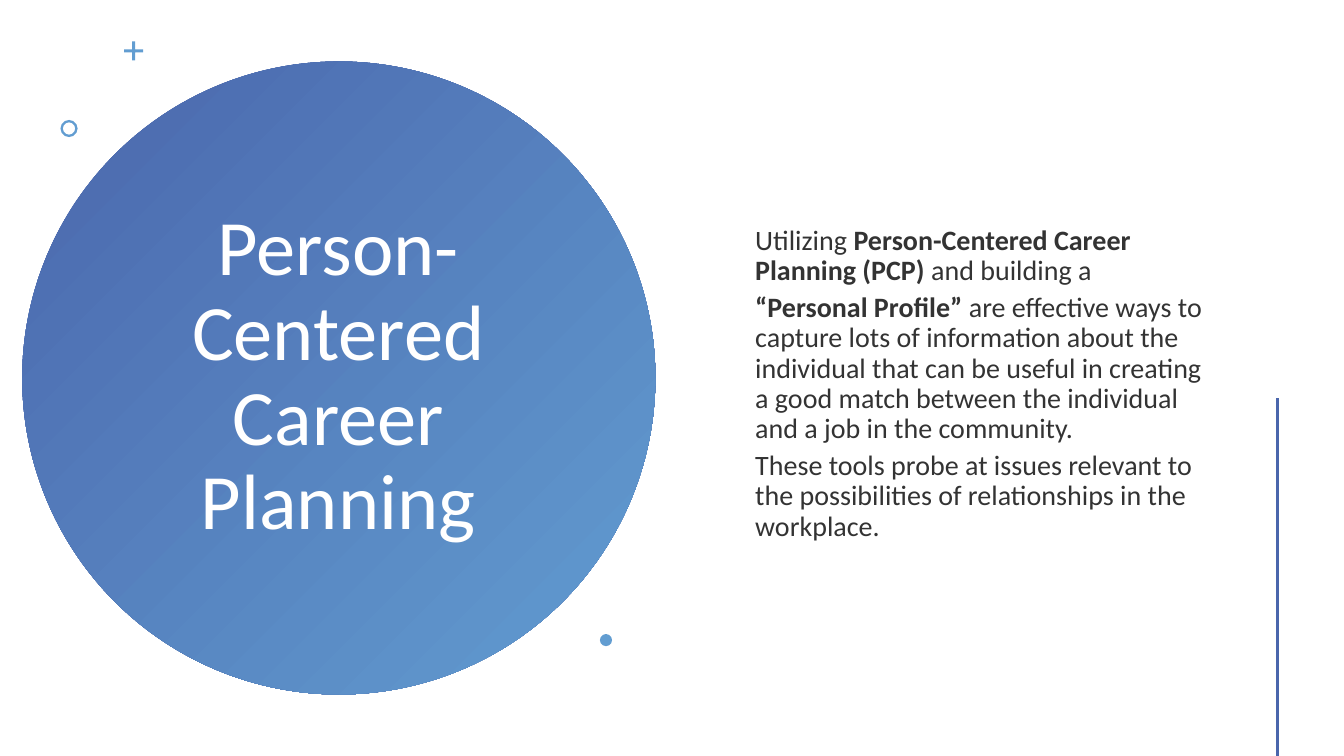
"""Build the Person-Centered Career Planning slide."""
from dataclasses import dataclass, field
from typing import Any

from lxml import etree
from pptx import Presentation
from pptx.dml.color import RGBColor
from pptx.enum.shapes import MSO_CONNECTOR, MSO_SHAPE
from pptx.enum.text import MSO_ANCHOR, MSO_AUTO_SIZE, PP_ALIGN
from pptx.oxml.ns import qn
from pptx.util import Pt

PX = 9144
SLIDE_W, SLIDE_H = 1333, 750
TITLE_ONLY = 5
OVAL, CROSS, DONUT = MSO_SHAPE.OVAL, MSO_SHAPE.CROSS, MSO_SHAPE.DONUT
STRAIGHT = MSO_CONNECTOR.STRAIGHT
MIDDLE, CENTER, LEFT = MSO_ANCHOR.MIDDLE, PP_ALIGN.CENTER, PP_ALIGN.LEFT
NO_AUTOFIT = MSO_AUTO_SIZE.NONE
COLORS = {"deep": "4A66AC", "sky": "629DD1", "white": "FFFFFF", "ink": "333333"}
FRAME_FORMAT = {"word_wrap": True, "auto_size": NO_AUTOFIT, "vertical_anchor": MIDDLE}


@dataclass(frozen=True)
class Ornament:
    """A preset shape in px with its fill colours and adjustments."""

    kind: Any
    left: int
    top: int
    size: int
    colors: tuple[str, ...] = ("sky",)
    adjustments: tuple[float, ...] = ()


@dataclass(frozen=True)
class Passage:
    """A paragraph as pairs of wording and boldness."""

    runs: tuple[tuple[str, bool], ...]


@dataclass(frozen=True)
class TextStyle:
    """Formats shared by all paragraphs and runs of a text frame."""

    size: int
    color: str
    paragraph: dict[str, Any] = field(default_factory=dict)


DISC = Ornament(OVAL, 22, 61, 628, ("deep", "sky"))
ACCENTS = [
    Ornament(CROSS, 123, 41, 19, adjustments=(0.42,)),
    Ornament(DONUT, 60, 119, 17, adjustments=(0.14,)),
    Ornament(OVAL, 595, 629, 12),
]
HEADING = [Passage((("Person-Centered Career Planning", False),))]
BODY = [
    Passage((
        ("Utilizing ", False),
        ("Person-Centered Career Planning (PCP)", True),
        (" and building a", False),
    )),
    Passage((
        ("“Personal Profile”", True),
        (" are effective ways to capture lots of information about the individual "
         "that can be useful in creating a good match between the individual "
         "and a job in the community.", False),
    )),
    Passage((
        ("These tools probe at issues relevant to the possibilities of "
         "relationships in the workplace.", False),
    )),
]
HEADING_STYLE = TextStyle(56, "white", {"alignment": CENTER, "line_spacing": 0.9})
BODY_STYLE = TextStyle(
    20, "ink", {"alignment": LEFT, "line_spacing": 0.9, "space_before": Pt(5)}
)


def px(length: int) -> int:
    """Turn px into EMU."""
    return length * PX


def rgb(name: str) -> RGBColor:
    """Look up a named colour."""
    return RGBColor.from_string(COLORS[name])


def apply(target: Any, formats: dict[str, Any]) -> None:
    """Set each format value on the target."""
    for attribute, value in formats.items():
        setattr(target, attribute, value)


def draw_ornament(slide: Any, ornament: Ornament) -> None:
    """Draw a borderless shape with a solid or diagonal gradient fill."""
    shape = slide.shapes.add_shape(
        ornament.kind, px(ornament.left), px(ornament.top),
        px(ornament.size), px(ornament.size),
    )
    shape.shadow.inherit = False
    shape.line.fill.background()
    for index, value in enumerate(ornament.adjustments):
        shape.adjustments[index] = value
    if len(ornament.colors) == 1:
        shape.fill.solid()
        shape.fill.fore_color.rgb = rgb(ornament.colors[0])
        return
    shape.fill.gradient()
    shape.fill.gradient_angle = 315
    for position, (stop, color) in enumerate(
        zip(shape.fill.gradient_stops, ornament.colors)
    ):
        stop.position = position
        stop.color.rgb = rgb(color)


def write_passages(frame: Any, passages: list[Passage], style: TextStyle) -> None:
    """Fill a text frame with styled paragraphs."""
    apply(frame, FRAME_FORMAT)
    for index, passage in enumerate(passages):
        paragraph = frame.add_paragraph() if index else frame.paragraphs[0]
        apply(paragraph, style.paragraph)
        for wording, bold in passage.runs:
            run = paragraph.add_run()
            run.text = wording
            apply(run.font, {"name": "Calibri", "size": Pt(style.size), "bold": bold})
            run.font.color.rgb = rgb(style.color)


def draw_rule(slide: Any, x: int, top: int, bottom: int) -> None:
    """Draw the vertical rule at the right edge."""
    rule = slide.shapes.add_connector(STRAIGHT, px(x), px(top), px(x), px(bottom))
    rule.line.color.rgb = rgb("deep")
    rule.line.width = Pt(2)
    etree.SubElement(rule._element.spPr, qn("a:effectLst"))


def main() -> None:
    """Build and save the slide."""
    deck = Presentation()
    apply(deck, {"slide_width": px(SLIDE_W), "slide_height": px(SLIDE_H)})
    slide = deck.slides.add_slide(deck.slide_layouts[TITLE_ONLY])

    draw_ornament(slide, DISC)
    heading = slide.shapes.title
    slide.shapes._spTree.append(heading._element)
    apply(heading, {
        "left": px(136), "top": px(141), "width": px(399), "height": px(467),
    })
    write_passages(heading.text_frame, HEADING, HEADING_STYLE)

    for accent in ACCENTS:
        draw_ornament(slide, accent)
    body = slide.shapes.add_textbox(px(689), px(62), px(522), px(638))
    body.text_frame.margin_left = px(60)
    write_passages(body.text_frame, BODY, BODY_STYLE)
    draw_rule(slide, 1267, 395, SLIDE_H)

    deck.save("out.pptx")


if __name__ == "__main__":
    main()
